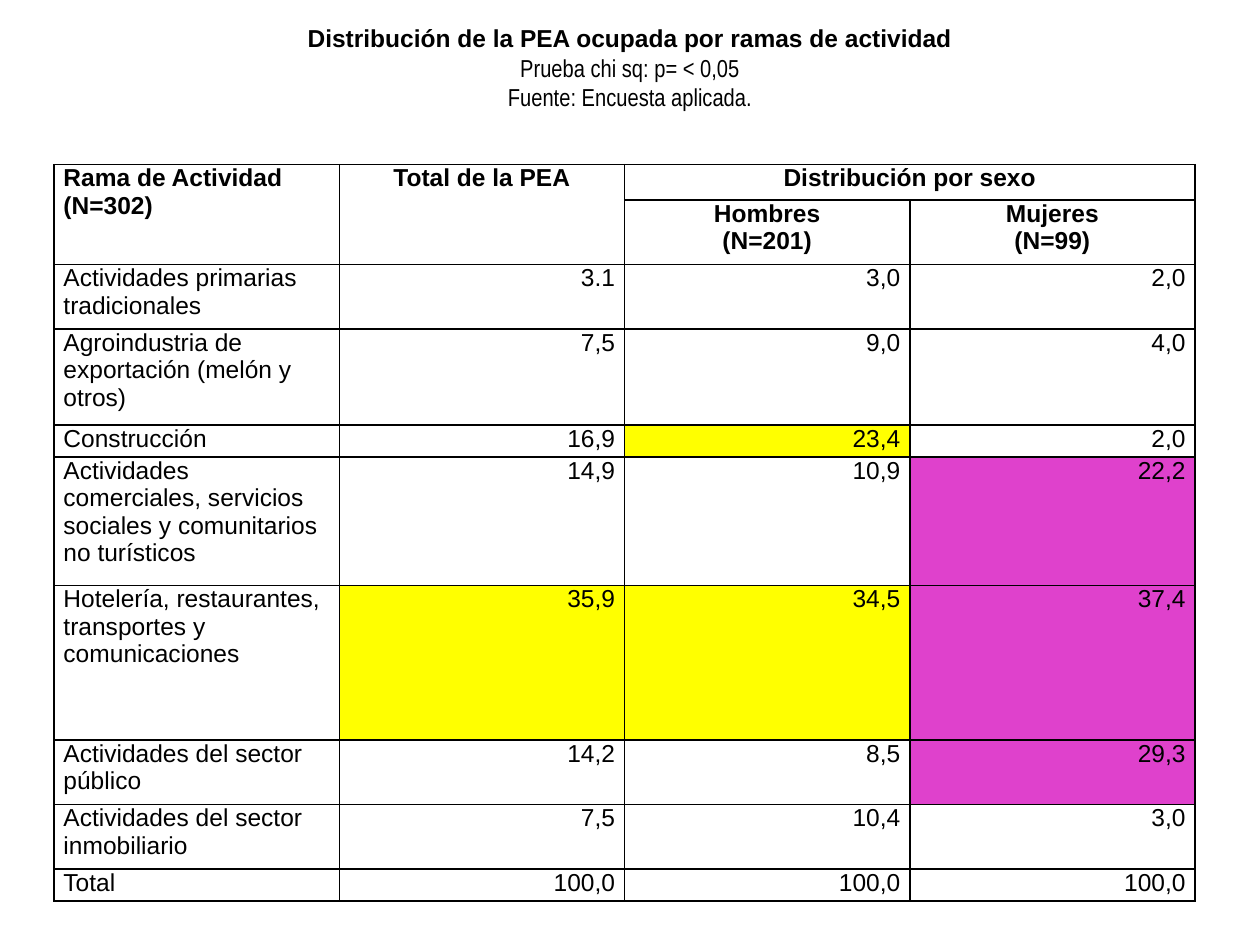
import pptx
import pptx.dml.color
import pptx.enum.text
import pptx.oxml.ns
import pptx.util
from lxml import etree

Cm, Pt = pptx.util.Cm, pptx.util.Pt
ALIGN = pptx.enum.text.PP_ALIGN
LEFT, MID, RIGHT, JUST = ALIGN.LEFT, ALIGN.CENTER, ALIGN.RIGHT, ALIGN.JUSTIFY
INK, SUN, PINK = "000000", "FFFF00", "DF41CC"

TITLE = "Distribución de la PEA ocupada por ramas de actividad"
NOTES = ["Prueba chi sq: p= < 0,05", "Fuente: Encuesta aplicada."]

# (row, column, row span, column span, lines, alignment)
HEAD = [
    (0, 0, 2, 1, ["Rama de Actividad", "(N=302)"], LEFT),
    (0, 1, 2, 1, ["Total de la PEA"], MID),
    (0, 2, 1, 2, ["Distribución por sexo"], MID),
    (1, 2, 1, 1, ["Hombres", "(N=201)"], MID),
    (1, 3, 1, 1, ["Mujeres", "(N=99)"], MID),
]
# (height in cm, branch, total, men, women)
BODY = [
    (1.3, "Actividades primarias tradicionales", "3.1", "3,0", "2,0"),
    (1.94, "Agroindustria de exportación (melón y otros)", "7,5", "9,0", "4,0"),
    (0.64, "Construcción", "16,9", "23,4", "2,0"),
    (2.59, "Actividades comerciales, servicios sociales y comunitarios "
           "no turísticos", "14,9", "10,9", "22,2"),
    (3.12, "Hotelería, restaurantes, transportes y comunicaciones",
     "35,9", "34,5", "37,4"),
    (1.3, "Actividades del sector público", "14,2", "8,5", "29,3"),
    (1.3, "Actividades del sector inmobiliario", "7,5", "10,4", "3,0"),
    (0.64, "Total", "100,0", "100,0", "100,0"),
]
TOPS = [0.71, 1.3]
FILLS = {(4, 2): SUN, (6, 1): SUN, (6, 2): SUN,
         (5, 3): PINK, (6, 3): PINK, (7, 3): PINK}
WIDTH, COLS = 5.75, 4


def color(code):
    return pptx.dml.color.RGBColor.from_string(code)


def write(frame, text, first=False, font="Arial", size=14, bold=False,
          tint=INK, align=LEFT):
    """Put text in the first paragraph of the frame, or in a new one."""
    par = frame.paragraphs[0] if first else frame.add_paragraph()
    par.alignment = align
    run = par.add_run()
    run.text = text
    run.font.name, run.font.size, run.font.bold = font, Pt(size), bold
    run.font.color.rgb = color(tint)


def style(cell, fill=None):
    """Set margins, thin black borders and the fill of a cell."""
    cell.margin_left = cell.margin_right = Cm(0.19)
    cell.margin_top = cell.margin_bottom = 0
    qn = pptx.oxml.ns.qn
    props = cell._tc.get_or_add_tcPr()
    for side in ("lnL", "lnR", "lnT", "lnB"):
        line = etree.SubElement(props, qn("a:" + side), w=str(Pt(1)))
        solid = etree.SubElement(line, qn("a:solidFill"))
        etree.SubElement(solid, qn("a:srgbClr"), val=INK)
    if fill:
        cell.fill.solid()
        cell.fill.fore_color.rgb = color(fill)
    else:
        cell.fill.background()


def add_grid(slide):
    highs = TOPS + [row[0] for row in BODY]
    grid = slide.shapes.add_table(
        len(highs), COLS, Cm(1.09), Cm(3.32),
        Cm(WIDTH * COLS), Cm(sum(highs))).table
    grid.first_row = grid.horz_banding = False
    for col in grid.columns:
        col.width = Cm(WIDTH)
    for i, high in enumerate(highs):
        grid.rows[i].height = Cm(high)
        for j in range(COLS):
            style(grid.cell(i, j), FILLS.get((i, j)))

    for i, j, down, over, lines, align in HEAD:
        cell = grid.cell(i, j)
        if down * over > 1:
            cell.merge(grid.cell(i + down - 1, j + over - 1))
        for n, text in enumerate(lines):
            write(cell.text_frame, text, first=n == 0, bold=True, align=align)

    for i, (_, *texts) in enumerate(BODY, len(TOPS)):
        for j, text in enumerate(texts):
            align = RIGHT if j else JUST if text == "Total" else LEFT
            write(grid.cell(i, j).text_frame, text, first=True, align=align)


def add_title(slide):
    title = slide.shapes.title
    title.left, title.top = Cm(5.92), Cm(0.33)
    title.width, title.height = Cm(13.56), Cm(2.06)
    frame = title.text_frame
    frame.word_wrap = False
    frame.auto_size = pptx.enum.text.MSO_AUTO_SIZE.SHAPE_TO_FIT_TEXT
    frame.vertical_anchor = pptx.enum.text.MSO_ANCHOR.MIDDLE
    write(frame, TITLE, first=True, bold=True, align=MID)
    for note in NOTES:
        write(frame, note, font="Arial Narrow", align=MID)


def main():
    deck = pptx.Presentation()
    deck.slide_width, deck.slide_height = Cm(25.4), Cm(19.05)
    slide = deck.slides.add_slide(deck.slide_layouts[5])
    add_title(slide)
    add_grid(slide)
    deck.save("out.pptx")


if __name__ == "__main__":
    main()
